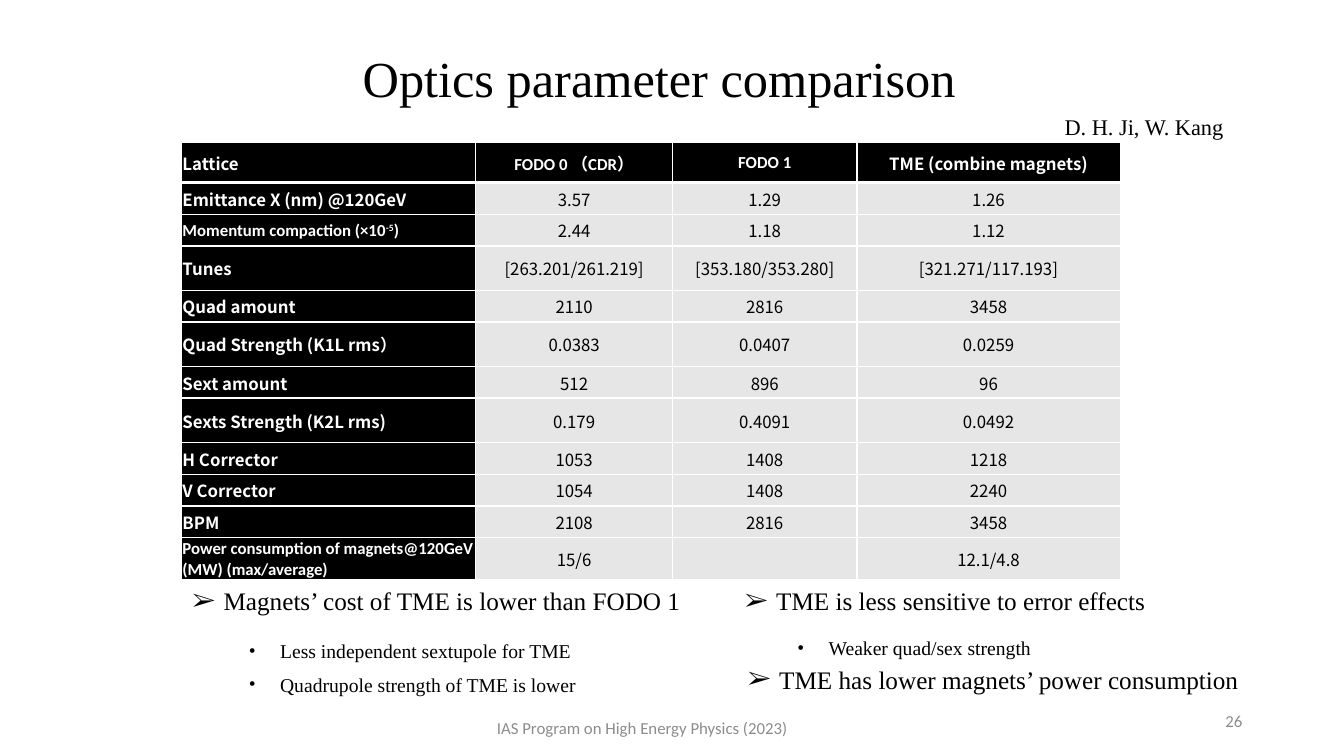
from lxml.etree import SubElement
from pptx import Presentation
from pptx.dml.color import RGBColor
from pptx.enum.text import MSO_ANCHOR as Anchor, PP_ALIGN as Align
from pptx.oxml.ns import qn
from pptx.util import Inches, Pt

TILE = Inches(0.1)
SERIF, SANS, CJK = "Times New Roman", "Calibri", "Noto Sans CJK SC"
BLACK, WHITE, PALE, GREY = "000000", "FFFFFF", "E7E6E6", "8C8C8C"
HEADINGS = ["Lattice", "FODO 0 （CDR）", "FODO 1", "TME (combine magnets)"]
PARAMETERS = [
    ("Emittance X (nm) @120GeV", "3.57", "1.29", "1.26"),
    ("Momentum compaction (×10^-5^)", "2.44", "1.18", "1.12"),
    ("Tunes", "[263.201/261.219]", "[353.180/353.280]", "[321.271/117.193]"),
    ("Quad amount", "2110", "2816", "3458"),
    ("Quad Strength (K1L rms）", "0.0383", "0.0407", "0.0259"),
    ("Sext amount", "512", "896", "96"),
    ("Sexts Strength (K2L rms)", "0.179", "0.4091", "0.0492"),
    ("H Corrector", "1053", "1408", "1218"),
    ("V Corrector", "1054", "1408", "2240"),
    ("BPM", "2108", "2816", "3458"),
    ("Power consumption of magnets@120GeV (MW) (max/average)", "15/6", "", "12.1/4.8"),
]
CALIBRI_CELLS = {(0, 1), (0, 2), (2, 0), (11, 0)}
TALL_ROWS = {0: 4, 3: 4.4, 5: 4.4, 7: 4.4}
COLUMN_TILES = [29.2, 19.5, 18.3, 26.1]
CELL_FORMAT = {"margin_left": Inches(0.01), "margin_top": Inches(0.01),
               "margin_right": Inches(0.01), "margin_bottom": 0,
               "vertical_anchor": Anchor.MIDDLE}


def color(hex_text):
    """Turn a hex string into a colour."""
    return RGBColor.from_string(hex_text)


def tiles(count):
    """Turn a count of grid tiles into a length."""
    return int(count * TILE)


def style(font, size, face, ink, bold=False):
    """Set the look of a font."""
    for key, value in {"size": Pt(size), "name": face, "bold": bold}.items():
        setattr(font, key, value)
    font.color.rgb = color(ink)


def add_bullet(paragraph, mark):
    """Give a paragraph a hanging bullet."""
    properties = paragraph._p.get_or_add_pPr()
    properties.set("marL", str(tiles(3.1)))
    properties.set("indent", str(-tiles(3.1)))
    SubElement(properties, qn("a:buFont"), typeface=SERIF)
    SubElement(properties, qn("a:buChar"), char=mark)


def write(slide, box, lines, size, face=SERIF, ink=BLACK, align=Align.LEFT,
          anchor=Anchor.TOP, mark=None, spacing=None):
    """Write lines of text in a box given in tiles."""
    frame = slide.shapes.add_textbox(*map(tiles, box)).text_frame
    frame.word_wrap = True
    frame.vertical_anchor = anchor
    for index, line in enumerate(lines):
        paragraph = frame.add_paragraph() if index else frame.paragraphs[0]
        if mark:
            add_bullet(paragraph, mark)
        if spacing:
            paragraph.line_spacing = Pt(spacing)
        paragraph.alignment = align
        run = paragraph.add_run()
        run.text = line
        style(run.font, size, face, ink)


def set_borders(cell, row):
    """Draw white cell borders, thick under the heading row."""
    properties = cell._tc.get_or_add_tcPr()
    thick = {"T": row == 1, "B": row == 0}
    for side in "LRTB":
        line = SubElement(properties, qn(f"a:ln{side}"),
                          w=str(Pt(3 if thick.get(side) else 1)))
        SubElement(SubElement(line, qn("a:solidFill")), qn("a:srgbClr"), val=WHITE)


def fill_cell(cell, row, column, text):
    """Fill and format one cell, raising text between carets."""
    label = row == 0 or column == 0
    for key, value in CELL_FORMAT.items():
        setattr(cell, key, value)
    set_borders(cell, row)
    cell.fill.solid()
    cell.fill.fore_color.rgb = color(BLACK if label else PALE)
    face = SANS if (row, column) in CALIBRI_CELLS else CJK
    look = (12, face, WHITE if label else BLACK, label)
    paragraph = cell.text_frame.paragraphs[0]
    paragraph.alignment = Align.CENTER if column else Align.LEFT
    style(paragraph.font, *look)
    for index, part in enumerate(text.split("^") if text else []):
        run = paragraph.add_run()
        run.text = part
        style(run.font, *look)
        if index % 2:
            run.font._element.set("baseline", "30000")


def add_comparison(slide, box):
    """Build the lattice comparison table."""
    rows = [HEADINGS, *PARAMETERS]
    table = slide.shapes.add_table(len(rows), len(HEADINGS), *map(tiles, box)).table
    for column, width in enumerate(COLUMN_TILES):
        table.columns[column].width = tiles(width)
    for row, texts in enumerate(rows):
        table.rows[row].height = tiles(TALL_ROWS.get(row, 3.15))
        for column, text in enumerate(texts):
            fill_cell(table.cell(row, column), row, column, text)


def add_heading(slide, left, top):
    """Write the title and the authors."""
    write(slide, (left, top, 79.4, 7.1), ["Optics parameter comparison"], 36,
          align=Align.CENTER)
    write(slide, (left + 78.9, top + 6.5, 20.8, 3.7), ["D. H. Ji, W. Kang"], 16)


def add_finding(slide, box, claim, reasons=(), offset=(5.4, 4.2)):
    """Write a claim with its reasons indented below."""
    left, top, width, height = box
    write(slide, box, [claim], 18, mark="➢")
    if reasons:
        write(slide, (left + offset[0], top + offset[1], width - 9, height * len(reasons)),
              reasons, 14, mark="•", spacing=24)


def add_footer(slide, left, top):
    """Write the event name and the slide number."""
    look = {"size": 12, "face": SANS, "ink": GREY, "anchor": Anchor.MIDDLE}
    write(slide, (left, top, 76.2, 4), ["IAS Program on High Energy Physics (2023)"],
          align=Align.CENTER, **look)
    write(slide, (left + 68.6, top - 0.7, 30, 4), ["26"], align=Align.RIGHT, **look)


def main():
    """Build the slide and save it."""
    deck = Presentation()
    deck.slide_width, deck.slide_height = Inches(13.33), Inches(7.5)
    slide = deck.slides.add_slide(deck.slide_layouts[6])
    add_comparison(slide, (18, 14.1, 93.1, 43.5))
    add_heading(slide, 25.7, 4.2)
    add_finding(slide, (18.1, 57.6, 66, 4), "Magnets’ cost of TME is lower than FODO 1",
                ["Less independent sextupole for TME", "Quadrupole strength of TME is lower"],
                (5.6, 4.3))
    add_finding(slide, (72.9, 57.6, 47.2, 4), "TME is less sensitive to error effects",
                ["Weaker quad/sex strength"], (5.2, 4))
    add_finding(slide, (73.2, 65.4, 54.1, 4), "TME has lower magnets’ power consumption")
    add_footer(slide, 25.6, 70.2)
    deck.save("out.pptx")


if __name__ == "__main__":
    main()
